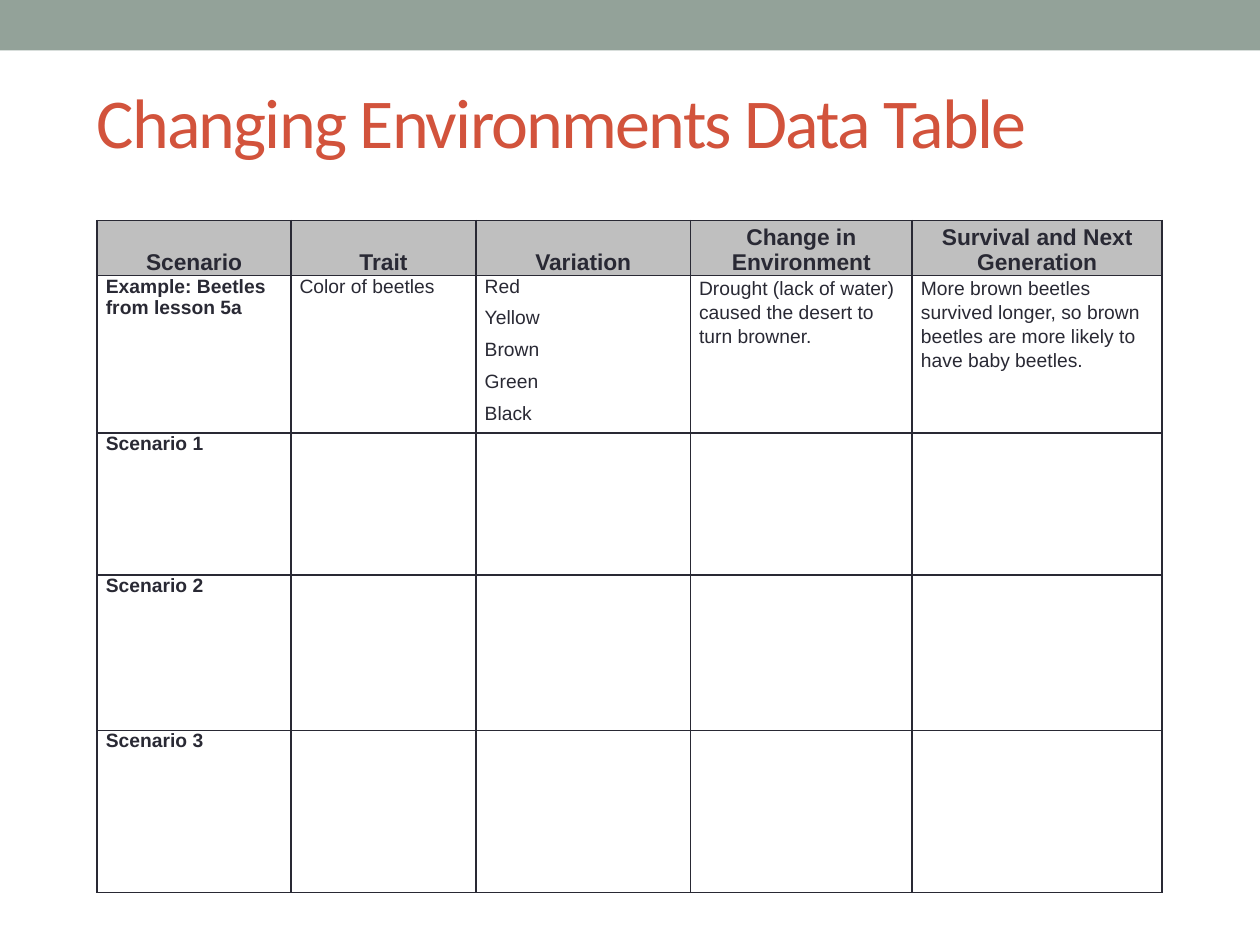
from pptx import Presentation
from pptx.dml.color import RGBColor
from pptx.enum.shapes import MSO_SHAPE
from pptx.enum.text import MSO_ANCHOR, PP_ALIGN
from pptx.oxml.ns import qn
from pptx.util import Pt
from lxml.etree import SubElement

SAGE = RGBColor(0x93, 0xA2, 0x99)
RUST = RGBColor(0xD2, 0x53, 0x3C)
INK = RGBColor(0x29, 0x29, 0x34)
GRAY = RGBColor(0xBF, 0xBF, 0xBF)


def write_text(frame, text, font="Arial", size=11, color=INK, bold=False,
               align=PP_ALIGN.LEFT, before=3, after=3, line_spacing=None, tracking=None):
    """Write one paragraph per line of text."""
    for index, line in enumerate(text.split("\n")):
        paragraph = frame.add_paragraph() if index else frame.paragraphs[0]
        paragraph.alignment = align
        paragraph.space_before, paragraph.space_after = Pt(before), Pt(after)
        if line_spacing:
            paragraph.line_spacing = line_spacing
        run = paragraph.add_run()
        run.text = line
        run.font.name, run.font.size, run.font.bold = font, Pt(size), bold
        run.font.color.rgb = color
        if tracking:
            run.font._element.set("spc", str(tracking * 100))


def add_borders(cell, color=INK, width=1):
    properties = cell._tc.get_or_add_tcPr()
    for side in ("a:lnL", "a:lnR", "a:lnT", "a:lnB"):
        border = SubElement(properties, qn(side), w=str(Pt(width)))
        fill = SubElement(border, qn("a:solidFill"))
        SubElement(fill, qn("a:srgbClr"), val=str(color))


prs = Presentation()
prs.slide_width, prs.slide_height = Pt(720), Pt(540)
slide = prs.slides.add_slide(prs.slide_layouts[5])

# Top band
band = slide.shapes.add_shape(MSO_SHAPE.RECTANGLE, 0, 0, prs.slide_width, Pt(28.8))
band.shadow.inherit = False
band.fill.solid()
band.fill.fore_color.rgb = SAGE
band.line.fill.background()

# Title
title = slide.shapes.title
title.left, title.top, title.width, title.height = Pt(48), Pt(30), Pt(636), Pt(78)
title.text_frame.vertical_anchor = MSO_ANCHOR.MIDDLE
write_text(title.text_frame, "Changing Environments Data Table", font="Calibri",
           size=40, color=RUST, before=0, after=0, tracking=-1)

# Data table content
headers = ["Scenario", "Trait", "Variation", "Change in Environment",
           "Survival and Next Generation"]
example = ["Example: Beetles from lesson 5a", "Color of beetles",
           "Red\nYellow\nBrown\nGreen\nBlack",
           "Drought (lack of water) caused the desert to turn browner.",
           "More brown beetles survived longer, so brown beetles are more likely "
           "to have baby beetles."]
scenarios = [[f"Scenario {number}", "", "", "", ""] for number in (1, 2, 3)]
rows = [headers, example, *scenarios]

# Data table grid
column_widths = [110.7, 105.8, 122.5, 126.8, 142.7]
row_heights = [31.5, 90, 81.2, 88.8, 92.5]
data_table = slide.shapes.add_table(
    len(rows), len(headers), Pt(55.5), Pt(126),
    Pt(sum(column_widths)), Pt(sum(row_heights))).table
data_table.first_row = data_table.horz_banding = False
for column, width in zip(data_table.columns, column_widths):
    column.width = Pt(width)
for row, height in zip(data_table.rows, row_heights):
    row.height = Pt(height)

# Data table cells
for r, texts in enumerate(rows):
    for c, text in enumerate(texts):
        cell = data_table.cell(r, c)
        cell.margin_left = cell.margin_right = Pt(5)
        cell.margin_top = cell.margin_bottom = 0
        add_borders(cell)
        if r == 0:
            cell.fill.solid()
            cell.fill.fore_color.rgb = GRAY
            cell.vertical_anchor = MSO_ANCHOR.BOTTOM
            write_text(cell.text_frame, text, size=13, bold=True, align=PP_ALIGN.CENTER)
            continue
        cell.fill.background()
        if r == 1:
            write_text(cell.text_frame, text, bold=c == 0,
                       line_spacing=1.12 if c >= 3 else None)
        elif text:
            write_text(cell.text_frame, text, bold=True, before=2, after=0)

prs.save("out.pptx")
